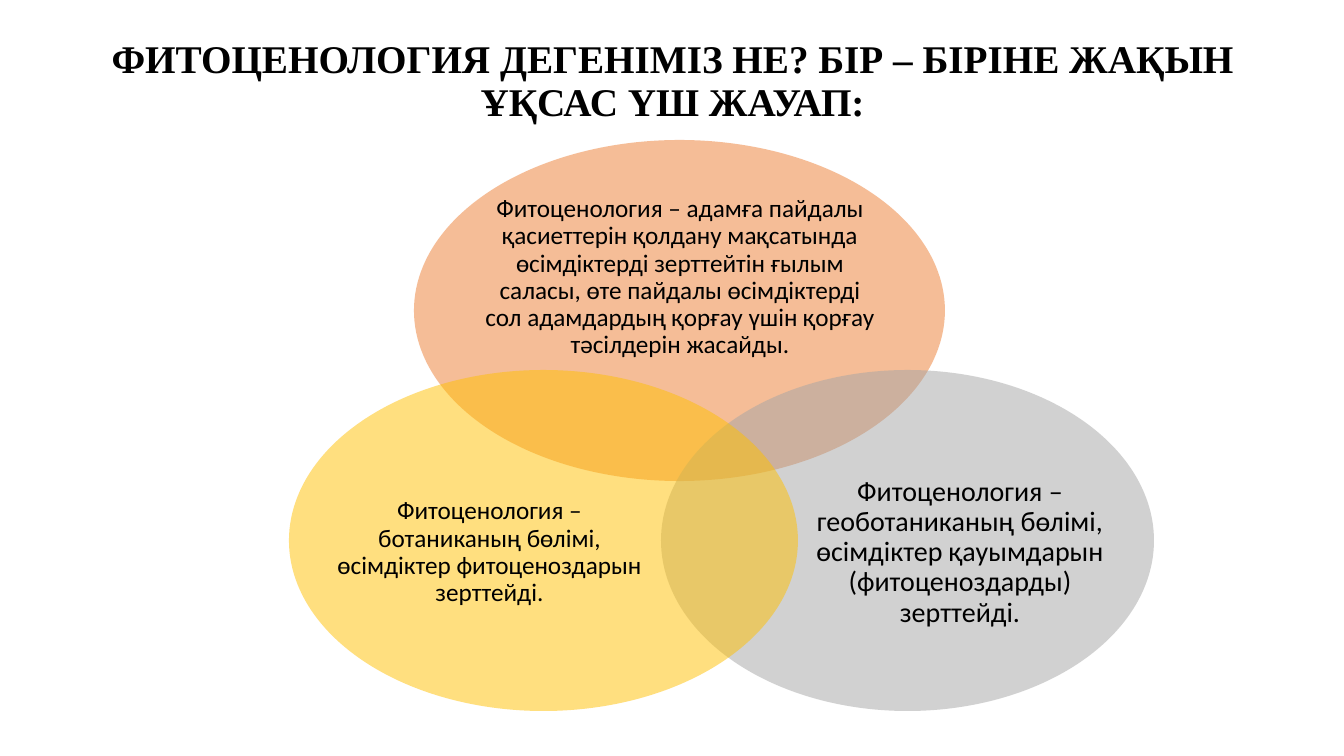
from lxml.etree import SubElement
from pptx import Presentation
from pptx.dml.color import RGBColor
from pptx.enum.shapes import MSO_SHAPE as Shape
from pptx.enum.text import MSO_ANCHOR as Anchor, MSO_AUTO_SIZE as AutoSize, PP_ALIGN as Align
from pptx.oxml.ns import qn
from pptx.util import Pt

SLIDE_WIDTH, SLIDE_HEIGHT = 1344, 756
EMU_PER_PX = 12192000 / SLIDE_WIDTH

TITLE = "ФИТОЦЕНОЛОГИЯ ДЕГЕНІМІЗ НЕ? БІР – БІРІНЕ ЖАҚЫН ҰҚСАС ҮШ ЖАУАП:"
ANSWERS = [
    ((414, 140, 531, 341), "ED7D31", (485, 201, 390, 153), 18,
     "Фитоценология – адамға пайдалы қасиеттерін қолдану мақсатында өсімдіктерді "
     "зерттейтін ғылым саласы, өте пайдалы өсімдіктерді сол адамдардың қорғау үшін "
     "қорғау тәсілдерін жасайды."),
    ((661, 370, 493, 341), "A5A5A5", (812, 459, 296, 187), 20,
     "Фитоценология – геоботаниканың бөлімі, өсімдіктер қауымдарын "
     "(фитоценоздарды) зерттейді."),
    ((289, 370, 509, 341), "FFC000", (337, 459, 305, 187), 18,
     "Фитоценология – ботаниканың бөлімі, өсімдіктер фитоценоздарын зерттейді."),
]


def px(length):
    return round(length * EMU_PER_PX)


def color(value):
    return RGBColor.from_string(value)


def write_text(shape, text, font_name, size, anchor, bold=False):
    frame = shape.text_frame
    frame.text = text
    frame.word_wrap = True
    frame.auto_size = AutoSize.NONE
    frame.vertical_anchor = anchor
    frame.margin_top = frame.margin_bottom = 0
    paragraph = frame.paragraphs[0]
    paragraph.alignment = Align.CENTER
    paragraph.line_spacing = 0.9
    paragraph.font.name = font_name
    paragraph.font.size = Pt(size)
    paragraph.font.bold = bold
    paragraph.font.color.rgb = color("000000")


def add_title(slide):
    title = slide.shapes.title
    title.left, title.top, title.width, title.height = map(px, (93, 40, 1159, 146))
    write_text(title, TITLE, "Times New Roman", 28, Anchor.TOP, bold=True)


def add_ellipse(slide, bounds, fill):
    ellipse = slide.shapes.add_shape(Shape.OVAL, *map(px, bounds))
    ellipse.shadow.inherit = False
    ellipse.line.fill.background()
    ellipse.fill.solid()
    ellipse.fill.fore_color.rgb = color(fill)
    fill_color = ellipse.element.spPr.find(qn("a:solidFill"))[0]
    SubElement(fill_color, qn("a:alpha"), val="50000")


def add_answer_text(slide, bounds, text, size):
    box = slide.shapes.add_textbox(*map(px, bounds))
    write_text(box, text, "Calibri", size, Anchor.MIDDLE)
    box.text_frame.margin_left = box.text_frame.margin_right = 0


def main():
    presentation = Presentation()
    presentation.slide_width = px(SLIDE_WIDTH)
    presentation.slide_height = px(SLIDE_HEIGHT)
    slide = presentation.slides.add_slide(presentation.slide_layouts[5])
    add_title(slide)
    for ellipse_bounds, fill, text_bounds, size, text in ANSWERS:
        add_ellipse(slide, ellipse_bounds, fill)
        add_answer_text(slide, text_bounds, text, size)
    presentation.save("out.pptx")


if __name__ == "__main__":
    main()
